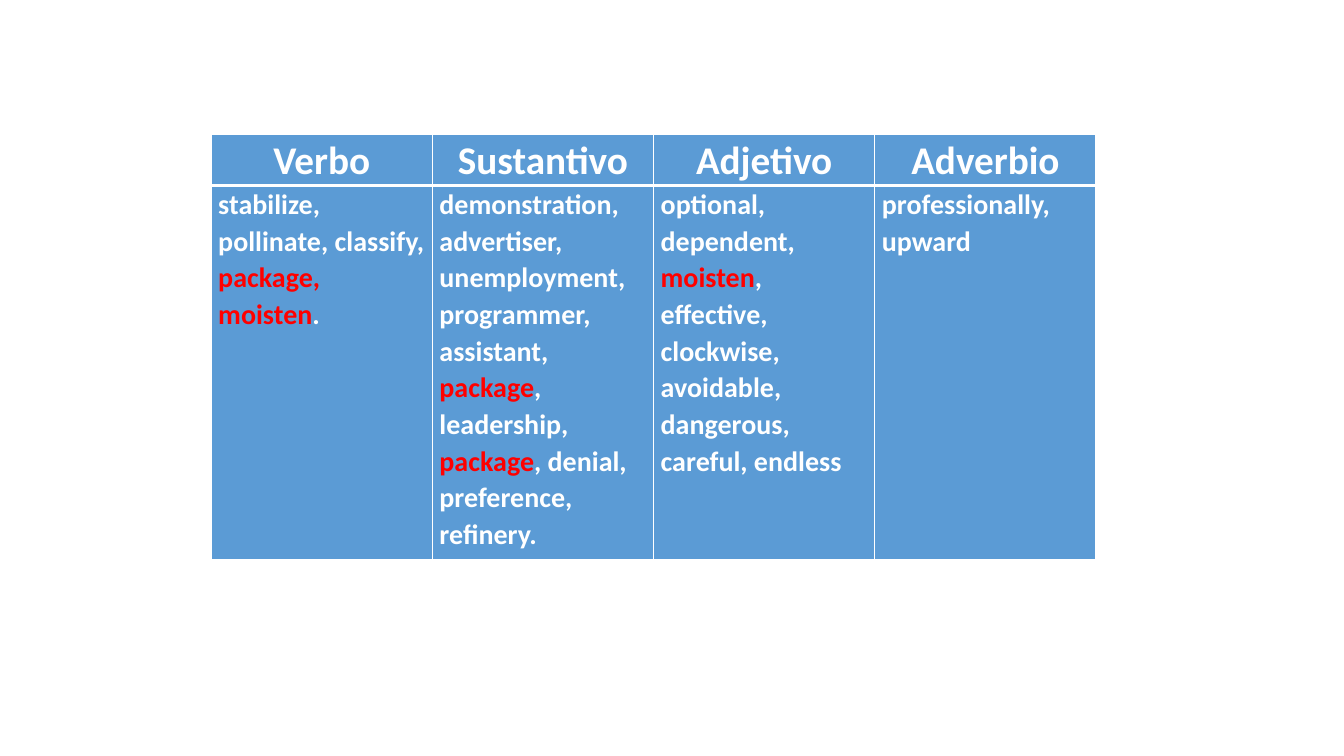
from dataclasses import dataclass

import lxml.etree
import pptx
import pptx.dml.color
import pptx.enum.text
import pptx.oxml.ns
import pptx.util
from pptx.util import Cm


@dataclass(frozen=True)
class Theme:
    """Colours, font and type sizes of the slide."""
    fill: str = "5B9BD5"
    text: str = "FFFFFF"
    highlight: str = "FF0000"
    border: str = "FFFFFF"
    font: str = "Calibri"
    heading_size: int = 28
    body_size: int = 20


THEME = Theme()
WORD_CLASSES = {
    "Verbo": "stabilize, pollinate, classify, *package, moisten*.",
    "Sustantivo": "demonstration, advertiser, unemployment, programmer, assistant, "
                  "*package*, leadership, *package*, denial, preference, refinery.",
    "Adjetivo": "optional, dependent, *moisten*, effective, clockwise, avoidable, "
                "dangerous, careful, endless",
    "Adverbio": "professionally, upward",
}


def set_borders(cell, widths):
    """Draw the cell borders, given as point widths by side."""
    properties = cell._tc.get_or_add_tcPr()
    for side in "LRTB":
        line = lxml.etree.SubElement(
            properties, pptx.oxml.ns.qn(f"a:ln{side}"), w=str(pptx.util.Pt(widths[side])))
        fill = lxml.etree.SubElement(line, pptx.oxml.ns.qn("a:solidFill"))
        lxml.etree.SubElement(fill, pptx.oxml.ns.qn("a:srgbClr"), val=THEME.border)


def fill_cell(cell, text, size, alignment, widths):
    """Format a cell and write its text, with starred words highlighted."""
    set_borders(cell, widths)
    cell.fill.solid()
    cell.fill.fore_color.rgb = pptx.dml.color.RGBColor.from_string(THEME.fill)
    cell.margin_left = cell.margin_right = Cm(0.18)
    cell.margin_top = cell.margin_bottom = 0
    paragraph = cell.text_frame.paragraphs[0]
    paragraph.alignment = alignment
    paragraph.line_spacing = 1.07
    paragraph.space_after = pptx.util.Pt(8)
    for index, part in enumerate(text.split("*")):
        run = paragraph.add_run()
        run.text = part
        run.font.name = THEME.font
        run.font.size = pptx.util.Pt(size)
        run.font.bold = True
        color = THEME.highlight if index % 2 else THEME.text
        run.font.color.rgb = pptx.dml.color.RGBColor.from_string(color)


def add_word_table(slide, left, top, width, heading_height, body_height):
    """Place the table of words sorted by word class in the given box."""
    count = len(WORD_CLASSES)
    table = slide.shapes.add_table(
        2, count, left, top, width, heading_height + body_height).table
    table.rows[0].height = heading_height
    table.rows[1].height = body_height
    align = pptx.enum.text.PP_ALIGN
    for index, (heading, words) in enumerate(WORD_CLASSES.items()):
        table.columns[index].width = width // count
        fill_cell(table.cell(0, index), heading, THEME.heading_size, align.CENTER,
                  {"L": 1, "R": 1, "T": 1, "B": 3})
        fill_cell(table.cell(1, index), words, THEME.body_size, align.LEFT,
                  {"L": 1, "R": 1, "T": 3, "B": 1})


def main():
    """Build and save the presentation."""
    presentation = pptx.Presentation()
    presentation.slide_width = Cm(33.87)
    presentation.slide_height = Cm(19.05)
    slide = presentation.slides.add_slide(presentation.slide_layouts[6])
    add_word_table(slide, Cm(5.32), Cm(3.38), Cm(22.3), Cm(1.25), Cm(9.43))
    presentation.save("out.pptx")


if __name__ == "__main__":
    main()
